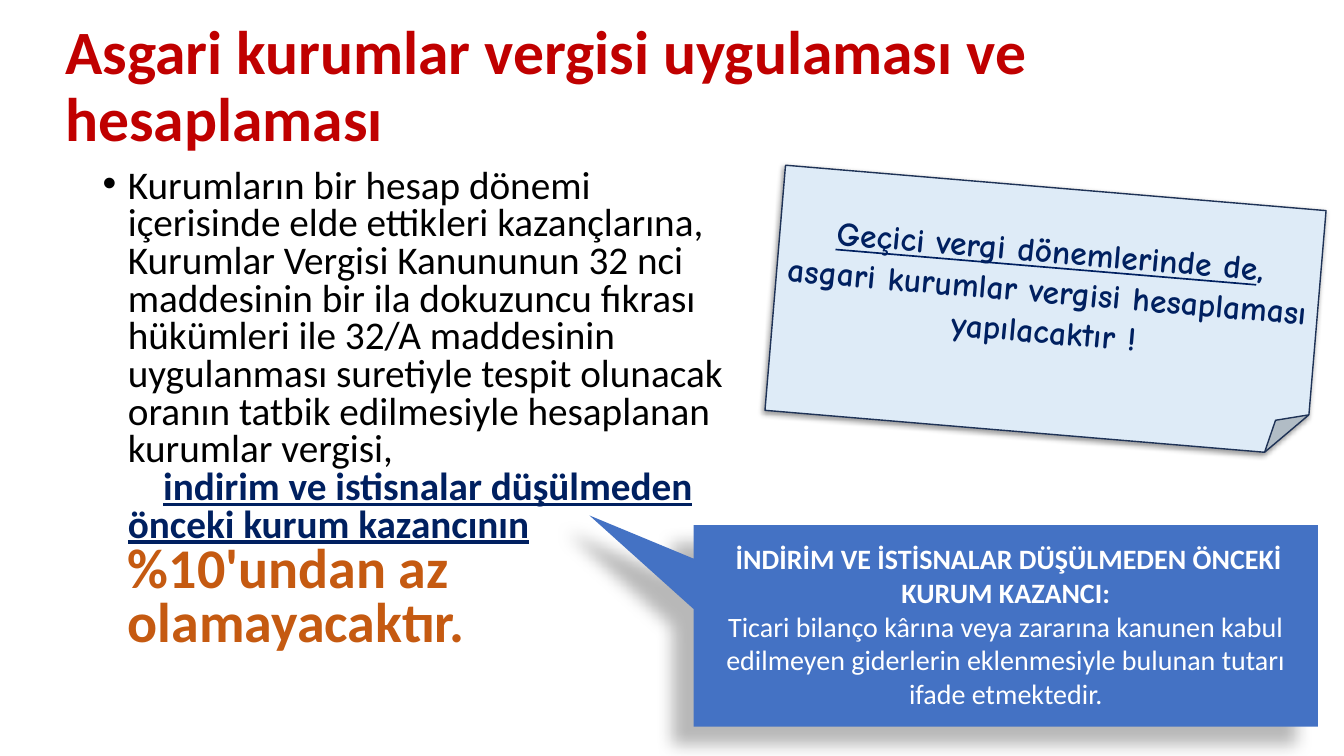
from lxml import etree
from pptx import Presentation
from pptx.dml.color import RGBColor
from pptx.enum.shapes import MSO_SHAPE
from pptx.enum.text import MSO_ANCHOR, PP_ALIGN
from pptx.oxml.ns import qn
from pptx.util import Inches, Pt

FOLDED, CALLOUT = MSO_SHAPE.FOLDED_CORNER, MSO_SHAPE.RECTANGULAR_CALLOUT
MIDDLE, TOP = MSO_ANCHOR.MIDDLE, MSO_ANCHOR.TOP
CENTER = PP_ALIGN.CENTER
COLORS = {
    "title": "C00000", "body": "000000", "navy": "002060", "rate": "C55A11",
    "note": "DEEBF7", "note_edge": "1E3256", "callout": "4472C4",
    "white": "FFFFFF", "shadow": "000000",
}
BODY_FONT, NOTE_FONT = "Calibri", "Comic Neue"


def rgb(name):
    """Return the palette colour of that name."""
    return RGBColor.from_string(COLORS[name])


def add_run(paragraph, text, size, color, bold=False, underline=False, font=BODY_FONT):
    """Append one formatted run to a paragraph."""
    run = paragraph.add_run()
    run.text = text
    run.font.name = font
    run.font.size = Pt(size)
    run.font.bold = bold
    run.font.underline = underline
    run.font.color.rgb = rgb(color)


def add_text_area(slide, box, anchor):
    """Add a wrapping text box and return its first paragraph."""
    frame = slide.shapes.add_textbox(*map(Inches, box)).text_frame
    frame.word_wrap = True
    frame.vertical_anchor = anchor
    return frame.paragraphs[0]


def add_panel(slide, preset, box, fill, shadow):
    """Add a filled preset shape with an outer shadow."""
    panel = slide.shapes.add_shape(preset, *map(Inches, box))
    panel.fill.solid()
    panel.fill.fore_color.rgb = rgb(fill)
    panel.shadow.inherit = False
    opacity, blur, distance, angle = shadow
    effects = panel._element.spPr.find(qn("a:effectLst"))
    outer = etree.SubElement(
        effects, qn("a:outerShdw"), blurRad=str(Pt(blur)), dist=str(Pt(distance)),
        dir=str(angle * 60000), algn="tr", rotWithShape="0")
    tone = etree.SubElement(outer, qn("a:srgbClr"), val=COLORS["shadow"])
    etree.SubElement(tone, qn("a:alpha"), val=str(opacity * 1000))
    panel.text_frame.word_wrap = True
    panel.text_frame.vertical_anchor = MIDDLE
    return panel


def add_title(slide, box):
    """Place the slide heading."""
    heading = add_text_area(slide, box, MIDDLE)
    heading.line_spacing = 0.9
    add_run(heading, "Asgari kurumlar vergisi uygulaması ve hesaplaması", 44, "title", bold=True)


def add_rule(slide, box):
    """Place the bulleted minimum tax rule with its tab stops."""
    rule = add_text_area(slide, box, TOP)
    rule.line_spacing = 0.8
    properties = rule._p.get_or_add_pPr()
    properties.set("marL", str(Inches(0.25)))
    properties.set("indent", str(Inches(-0.25)))
    etree.SubElement(properties, qn("a:buFont"), typeface="Arial")
    etree.SubElement(properties, qn("a:buChar"), char="•")
    tabs = etree.SubElement(properties, qn("a:tabLst"))
    for stop in (0.6, 6.2):
        etree.SubElement(tabs, qn("a:tab"), pos=str(Inches(stop)), algn="l")
    add_run(rule, "Kurumların bir hesap dönemi içerisinde elde ettikleri kazançlarına, "
            "Kurumlar Vergisi Kanununun 32 nci maddesinin bir ila dokuzuncu fıkrası "
            "hükümleri ile 32/A maddesinin uygulanması suretiyle tespit olunacak oranın "
            "tatbik edilmesiyle hesaplanan kurumlar vergisi,", 28, "body")
    rule.add_line_break()
    add_run(rule, "\t", 28, "body")
    add_run(rule, "indirim ve istisnalar düşülmeden önceki kurum kazancının\t",
            28, "navy", bold=True, underline=True)
    rule.add_line_break()
    add_run(rule, "%10'undan az olamayacaktır.", 40, "rate", bold=True)


def add_note(slide, box):
    """Place the tilted note about provisional tax periods."""
    note = add_panel(slide, FOLDED, box, "note", (40, 4, 2, 135))
    note.rotation = 4.8
    note.line.color.rgb = rgb("note_edge")
    note.line.width = Pt(1)
    reminder = note.text_frame.paragraphs[0]
    reminder.alignment = CENTER
    add_run(reminder, "Geçici vergi dönemlerinde de", 24, "navy", True, True, NOTE_FONT)
    add_run(reminder, ", asgari kurumlar vergisi hesaplaması yapılacaktır !",
            24, "navy", True, False, NOTE_FONT)


def add_definition(slide, box):
    """Place the callout that defines the earnings base."""
    definition = add_panel(slide, CALLOUT, box, "callout", (28, 11.8, 19.7, 141))
    definition.adjustments[0] = -0.667
    definition.adjustments[1] = -0.548
    definition.line.fill.background()
    frame = definition.text_frame
    term, meaning = frame.paragraphs[0], frame.add_paragraph()
    term.alignment = meaning.alignment = CENTER
    add_run(term, " İNDİRİM VE İSTİSNALAR DÜŞÜLMEDEN ÖNCEKİ KURUM KAZANCI:",
            20, "white", bold=True)
    add_run(meaning, "Ticari bilanço kârına veya zararına kanunen kabul edilmeyen giderlerin "
            "eklenmesiyle bulunan tutarı ifade etmektedir.", 20, "white")


def main():
    """Build and save the slide."""
    deck = Presentation()
    deck.slide_width, deck.slide_height = Inches(13.33), Inches(7.5)
    slide = deck.slides.add_slide(deck.slide_layouts[6])
    add_title(slide, (0.55, 0.4, 12.4, 0.95))
    add_rule(slide, (0.92, 1.63, 6.45, 5.13))
    add_note(slide, (7.68, 1.86, 5.38, 2.44))
    add_definition(slide, (6.88, 5.21, 6.19, 2))
    deck.save("out.pptx")


if __name__ == "__main__":
    main()
